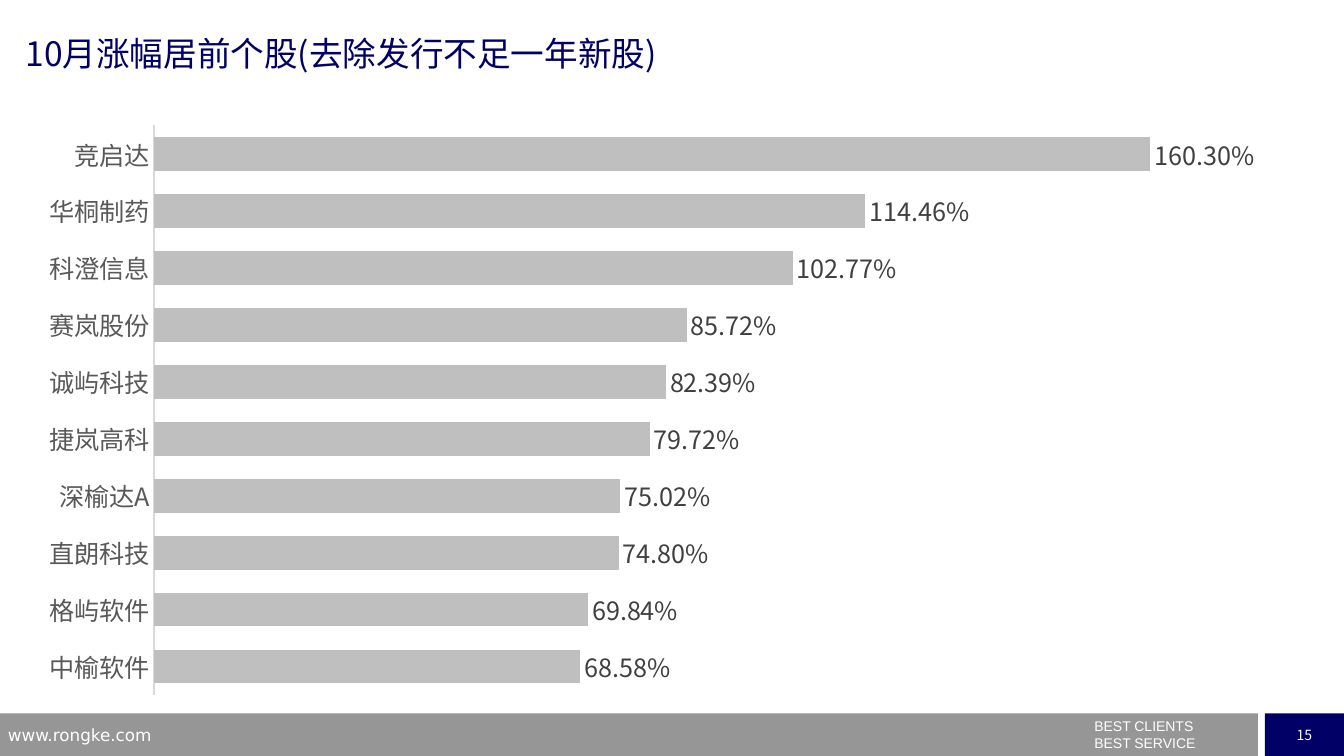
from dataclasses import dataclass

from lxml.etree import SubElement
from pptx import Presentation
from pptx.chart.data import CategoryChartData
from pptx.dml.color import RGBColor
from pptx.enum.chart import XL_CHART_TYPE as ChartType
from pptx.enum.chart import XL_LABEL_POSITION as LabelPosition
from pptx.enum.chart import XL_TICK_LABEL_POSITION as TickLabels
from pptx.enum.chart import XL_TICK_MARK as TickMark
from pptx.enum.shapes import MSO_SHAPE as Preset
from pptx.enum.text import MSO_ANCHOR as Anchor
from pptx.enum.text import MSO_AUTO_SIZE as AutoSize
from pptx.enum.text import PP_ALIGN as Align
from pptx.oxml.ns import qn
from pptx.text.text import Font, TextFrame
from pptx.util import Cm, Pt

CJK = "Noto Sans CJK SC"
NAVY, GREY, WHITE = "000066", "969696", "FFFFFF"
FOOTER_TOP, FOOTER_HEIGHT = 17.98, 1.07

GAINS = {
    "竞启达": 1.6030,
    "华桐制药": 1.1446,
    "科澄信息": 1.0277,
    "赛岚股份": 0.8572,
    "诚屿科技": 0.8239,
    "捷岚高科": 0.7972,
    "深榆达A": 0.7502,
    "直朗科技": 0.7480,
    "格屿软件": 0.6984,
    "中榆软件": 0.6858,
}


@dataclass(frozen=True)
class FooterPart:
    left: float
    width: float
    fill: str | None = None
    lines: tuple[str, ...] = ()
    font: str = CJK
    size: float = 10
    align: Align = Align.LEFT


FOOTER = (
    FooterPart(0, 31.7, fill=GREY),
    FooterPart(31.88, 1.99, fill=NAVY, lines=("15",), align=Align.CENTER),
    FooterPart(27.33, 4.3, lines=("BEST CLIENTS", "BEST SERVICE"), font="Arial"),
    FooterPart(-0.05, 8.18, lines=("www.rongke.com",), font="DejaVu Sans", size=12),
)


def rgb(code: str) -> RGBColor:
    return RGBColor.from_string(code)


def style_font(font: Font, name: str, size: float, color: str) -> None:
    """Set the face for Latin and East Asian text alike."""
    font.size = Pt(size)
    font.bold = False
    font.color.rgb = rgb(color)
    font.name = name
    SubElement(font._rPr, qn("a:ea"), typeface=name)


def write_lines(frame: TextFrame, lines: tuple[str, ...], name: str, size: float,
                color: str, align: Align = Align.LEFT) -> None:
    frame.text = "\n".join(lines)
    frame.auto_size = AutoSize.NONE
    frame.vertical_anchor = Anchor.MIDDLE
    frame.margin_top = frame.margin_bottom = 0
    for paragraph in frame.paragraphs:
        paragraph.alignment = align
        style_font(paragraph.font, name, size, color)


def add_footer_part(slide, part: FooterPart) -> None:
    place = (Cm(part.left), Cm(FOOTER_TOP), Cm(part.width), Cm(FOOTER_HEIGHT))
    if part.fill:
        shape = slide.shapes.add_shape(Preset.RECTANGLE, *place)
        shape.shadow.inherit = False
        shape.fill.solid()
        shape.fill.fore_color.rgb = rgb(part.fill)
        shape.line.fill.background()
    else:
        shape = slide.shapes.add_textbox(*place)
    if part.lines:
        shape.text_frame.word_wrap = True
        write_lines(shape.text_frame, part.lines, part.font, part.size, WHITE, part.align)


def set_title(slide, text: str) -> None:
    title = slide.shapes.title
    title.left, title.top, title.width, title.height = Cm(0.64), Cm(0.81), Cm(22.86), Cm(1.04)
    title.text_frame.margin_left = title.text_frame.margin_right = 0
    write_lines(title.text_frame, (text,), CJK, 24, NAVY)


def fix_plot_area(chart, x: float, y: float, w: float, h: float) -> None:
    """Pin the inner plot area to fractions of the chart frame."""
    plot_area = chart._chartSpace.chart.plotArea
    layout = plot_area.find(qn("c:layout"))
    if layout is None:
        layout = SubElement(plot_area, qn("c:layout"))
        plot_area.insert(0, layout)
    manual = SubElement(layout, qn("c:manualLayout"))
    settings = {"layoutTarget": "inner", "xMode": "edge", "yMode": "edge",
                "x": x, "y": y, "w": w, "h": h}
    for tag, value in settings.items():
        SubElement(manual, qn(f"c:{tag}"), val=str(value))


def add_gains_chart(slide) -> None:
    data = CategoryChartData(number_format="0.00%")
    data.categories = list(GAINS)
    data.add_series("涨幅", list(GAINS.values()))
    chart = slide.shapes.add_chart(ChartType.BAR_CLUSTERED, Cm(0.64), Cm(2.77),
                                   Cm(32.41), Cm(15.16), data).chart
    chart.has_legend = chart.has_title = False
    style_font(chart.font, CJK, 18, "000000")
    fix_plot_area(chart, 0.1, 0.026, 0.87, 0.947)

    stocks = chart.category_axis
    stocks.reverse_order = True
    stocks.major_tick_mark = stocks.minor_tick_mark = TickMark.NONE
    stocks.tick_label_position = TickLabels.NEXT_TO_AXIS
    stocks.format.line.color.rgb = rgb("D9D9D9")
    stocks.format.line.width = Pt(0.75)
    style_font(stocks.tick_labels.font, CJK, 18, "595959")

    gain_axis = chart.value_axis
    gain_axis.minimum_scale, gain_axis.maximum_scale = 0, 1.8
    gain_axis.has_major_gridlines = False
    gain_axis.visible = False

    bars = chart.plots[0]
    bars.gap_width = 70
    bars.vary_by_categories = False
    gains = bars.series[0]
    gains.format.fill.solid()
    gains.format.fill.fore_color.rgb = rgb("BFBFBF")
    labels = gains.data_labels
    labels.show_value = True
    labels.position = LabelPosition.OUTSIDE_END
    labels.number_format = "0.00%"
    labels.number_format_is_linked = False
    style_font(labels.font, CJK, 18, "404040")


def main() -> None:
    deck = Presentation()
    deck.slide_width, deck.slide_height = Cm(33.87), Cm(19.05)
    slide = deck.slides.add_slide(deck.slide_layouts.get_by_name("Title Only"))
    for part in FOOTER:
        add_footer_part(slide, part)
    set_title(slide, "10月涨幅居前个股(去除发行不足一年新股)")
    add_gains_chart(slide)
    deck.save("out.pptx")


if __name__ == "__main__":
    main()
